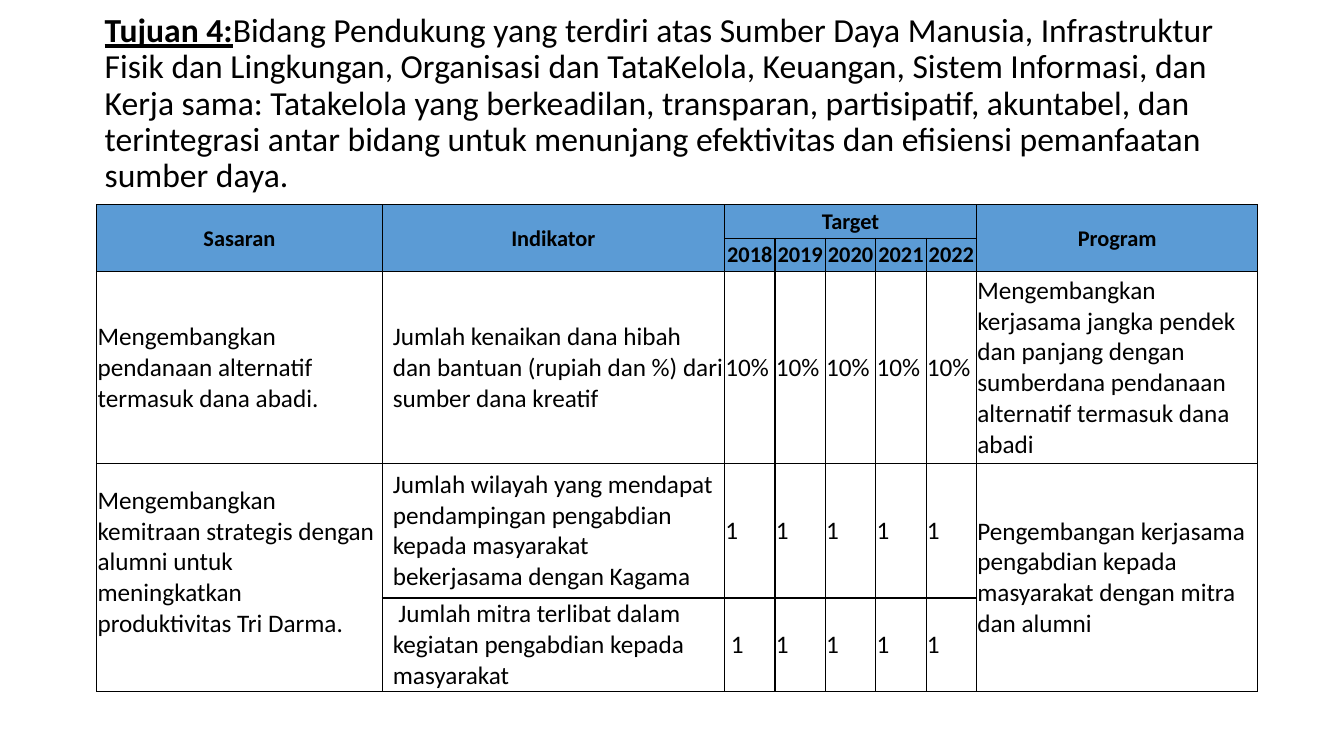
import pptx
import pptx.dml.color
import pptx.enum.text
import pptx.oxml.ns
import pptx.util
from dataclasses import dataclass
from lxml import etree

Cm = pptx.util.Cm
Pt = pptx.util.Pt
ALIGN = pptx.enum.text.PP_ALIGN
MIDDLE = pptx.enum.text.MSO_ANCHOR.MIDDLE


@dataclass(frozen=True)
class Theme:
    font: str = "Calibri"
    ink: str = "000000"
    header: str = "5B9BD5"
    title_size: int = 24
    header_size: int = 16
    body_size: int = 18
    border: float = 1


def rgb(value):
    return pptx.dml.color.RGBColor.from_string(value)


def add_run(p, text, font, size, color, bold=False, underline=False):
    r = p.add_run()
    r.text = text
    r.font.name = font
    r.font.size = Pt(size)
    r.font.color.rgb = rgb(color)
    r.font.bold = bold
    r.font.underline = underline


def sub(parent, tag, **attributes):
    return etree.SubElement(parent, pptx.oxml.ns.qn(tag), **attributes)


class SlideBuilder:
    def __init__(self, prs, theme):
        self.theme = theme
        self.s = prs.slides.add_slide(prs.slide_layouts[6])

    def title(self, label, text, left, top, width, height):
        t = self.theme
        tf = self.s.shapes.add_textbox(Cm(left), Cm(top), Cm(width), Cm(height)).text_frame
        tf.word_wrap = True
        tf.vertical_anchor = MIDDLE
        p = tf.paragraphs[0]
        p.line_spacing = 0.9
        add_run(p, label, t.font, t.title_size, t.ink, bold=True, underline=True)
        add_run(p, text, t.font, t.title_size, t.ink)

    def table(self, left, top, widths, heights):
        frame = self.s.shapes.add_table(len(heights), len(widths), Cm(left), Cm(top),
                                        Cm(sum(widths)), Cm(sum(heights)))
        table = frame.table
        for column, width in zip(table.columns, widths):
            column.width = Cm(width)
        for row, height in zip(table.rows, heights):
            row.height = Cm(height)
        for cell in table.iter_cells():
            self.borders(cell)
            cell.fill.background()
        return table

    def borders(self, cell):
        tcPr = cell._tc.get_or_add_tcPr()
        for side in ("a:lnL", "a:lnR", "a:lnT", "a:lnB"):
            line = sub(tcPr, side, w=str(Pt(self.theme.border)))
            sub(sub(line, "a:solidFill"), "a:srgbClr", val=self.theme.ink)

    def cell(self, cell, text, header=False, indent=0, first=0, bottom=0):
        """Fill a cell; indent moves all lines, first moves only the first line."""
        t = self.theme
        cell.margin_left = cell.margin_right = cell.margin_top = Cm(0.02)
        cell.margin_bottom = Cm(bottom)
        cell.vertical_anchor = MIDDLE
        p = cell.text_frame.paragraphs[0]
        p.alignment = ALIGN.CENTER if header else ALIGN.LEFT
        pPr = p._p.get_or_add_pPr()
        pPr.set("marL", str(Cm(indent)))
        pPr.set("indent", str(Cm(first)))
        if header:
            cell.fill.solid()
            cell.fill.fore_color.rgb = rgb(t.header)
        add_run(p, text, t.font, t.header_size if header else t.body_size, t.ink, bold=header)


def main():
    prs = pptx.Presentation()
    prs.slide_width, prs.slide_height = Cm(33.87), Cm(19.05)
    slide = SlideBuilder(prs, Theme())

    table = slide.table(2.44, 5.16, [7.19, 8.63] + [1.27] * 5 + [7.09],
                        [0.84, 0.84, 4.83, 3.4, 2.35])
    merges = [(0, 0, 1, 0), (0, 1, 1, 1), (0, 2, 0, 6), (0, 7, 1, 7),
              (3, 0, 4, 0), (3, 7, 4, 7)]
    for top, left, bottom, right in merges:
        table.cell(top, left).merge(table.cell(bottom, right))

    for column, text in ((0, "Sasaran"), (1, "Indikator"), (2, "Target"), (7, "Program")):
        slide.cell(table.cell(0, column), text, header=True)
    for column, year in enumerate(range(2018, 2023), 2):
        slide.cell(table.cell(1, column), str(year), header=True)

    slide.cell(table.cell(2, 0), "Mengembangkan pendanaan alternatif termasuk dana abadi.")
    slide.cell(table.cell(3, 0), "Mengembangkan kemitraan strategis dengan alumni untuk "
               "meningkatkan produktivitas Tri Darma.", bottom=0.78)
    slide.cell(table.cell(2, 7), "Mengembangkan kerjasama jangka pendek dan panjang dengan "
               "sumberdana pendanaan alternatif termasuk dana abadi")
    slide.cell(table.cell(3, 7), "Pengembangan kerjasama pengabdian kepada masyarakat "
               "dengan mitra dan alumni")

    indicators = [
        ("Jumlah kenaikan dana hibah dan bantuan (rupiah dan %) dari sumber dana kreatif",
         "10%", 0),
        ("Jumlah wilayah yang mendapat pendampingan pengabdian kepada masyarakat "
         "bekerjasama dengan Kagama", "1", 0),
        ("Jumlah mitra terlibat dalam kegiatan pengabdian kepada masyarakat", "1", 0.14),
    ]
    for row, (indicator, target, first) in enumerate(indicators, 2):
        slide.cell(table.cell(row, 1), indicator, indent=0.25, first=first)
        for column in range(2, 7):
            slide.cell(table.cell(row, column), target, first=first if column == 2 else 0)

    slide.title("Tujuan 4:",
                "Bidang Pendukung yang terdiri atas Sumber Daya Manusia, Infrastruktur Fisik dan "
                "Lingkungan, Organisasi dan TataKelola, Keuangan, Sistem Informasi, dan Kerja "
                "sama: Tatakelola yang berkeadilan, transparan, partisipatif, akuntabel, dan "
                "terintegrasi antar bidang untuk menunjang efektivitas dan efisiensi "
                "pemanfaatan sumber daya.", 2.39, 1.73, 29.21, 1.8)
    prs.save("out.pptx")


if __name__ == "__main__":
    main()
